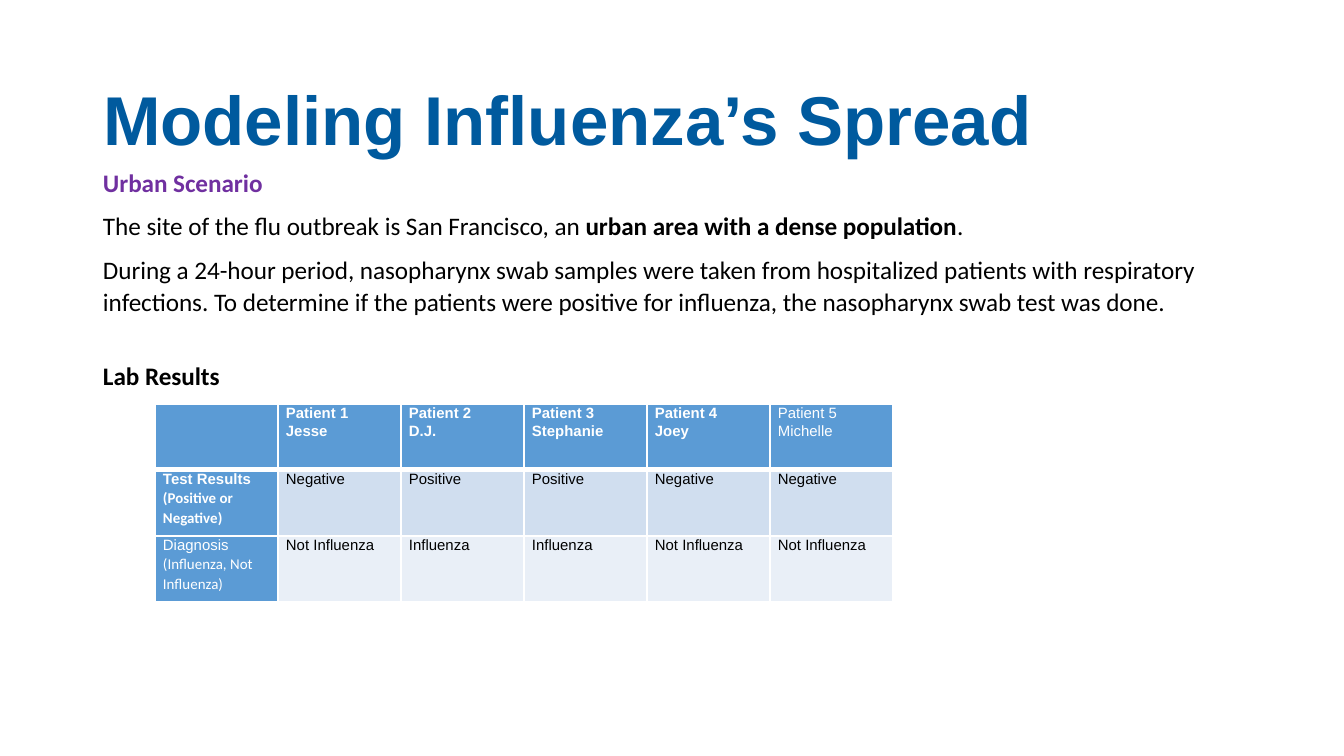
from lxml.etree import SubElement
from pptx import Presentation
from pptx.dml.color import RGBColor
from pptx.enum.text import MSO_ANCHOR
from pptx.oxml.ns import qn
from pptx.util import Emu, Pt

EMU_PER_PX = 914400 / 134.4
WHITE = RGBColor(0xFF, 0xFF, 0xFF)
BLACK = RGBColor(0x00, 0x00, 0x00)
TITLE_BLUE = RGBColor(0x00, 0x5A, 0x9E)
PURPLE = RGBColor(0x70, 0x30, 0xA0)
HEADER_BLUE = RGBColor(0x5B, 0x9B, 0xD5)
BAND_FILLS = [RGBColor(0xD0, 0xDE, 0xEF), RGBColor(0xE9, 0xEF, 0xF7)]

BODY = [
    ([("Urban Scenario", True)], PURPLE, 0),
    ([("The site of the flu outbreak is San Francisco, an ", False),
      ("urban area with a dense population", True), (".", False)], BLACK, 6),
    ([("During a 24-hour period, nasopharynx swab samples were taken from "
       "hospitalized patients with respiratory infections. To determine if the "
       "patients were positive for influenza, the nasopharynx swab test was done.",
       False)], BLACK, 6),
    ([("Lab Results", True)], BLACK, 22.5),
]
PATIENTS = ["Jesse", "D.J.", "Stephanie", "Joey", "Michelle"]
RESULTS = ["Negative", "Positive", "Positive", "Negative", "Negative"]
ROW_LABELS = [["Test Results", "(Positive or", "Negative)"],
              ["Diagnosis", "(Influenza, Not Influenza)"]]


def px(n):
    return Emu(round(n * EMU_PER_PX))


def style(p, size, font, color, bold=None, spacing=1.07, before=0):
    p.line_spacing = spacing
    p.space_before = Pt(before)
    p.font.size = Pt(size)
    p.font.name = font
    p.font.color.rgb = color
    p.font.bold = bold


def add_text(s, x, y, w, h):
    tf = s.shapes.add_textbox(px(x), px(y), px(w), px(h)).text_frame
    tf.word_wrap = True
    tf.margin_left = tf.margin_right = px(10)
    tf.margin_top = tf.margin_bottom = px(5)
    return tf


def add_title(s):
    p = add_text(s, 93, 81, 1158, 120).paragraphs[0]
    p.text = "Modeling Influenza’s Spread"
    style(p, 37, "Arial", TITLE_BLUE, True, 0.9)


def add_body(s):
    tf = add_text(s, 93, 160, 1133, 417)
    for i, (runs, color, before) in enumerate(BODY):
        p = tf.add_paragraph() if i else tf.paragraphs[0]
        style(p, 13.5, "Calibri", color, before=before)
        for text, bold in runs:
            r = p.add_run()
            r.text = text
            r.font.bold = bold


def set_borders(cell, bottom):
    tcPr = cell._tc.get_or_add_tcPr()
    widths = {"a:lnL": 1, "a:lnR": 1, "a:lnT": 1, "a:lnB": bottom}
    for i, (tag, width) in enumerate(widths.items()):
        ln = SubElement(tcPr, qn(tag), w=str(Pt(width)))
        fill = SubElement(ln, qn("a:solidFill"))
        SubElement(fill, qn("a:srgbClr"), val=str(WHITE))
        tcPr.remove(ln)
        tcPr.insert(i, ln)


def fill_cell(cell, lines, fill, color, bold, note_font="Arial", bottom=1):
    cell.fill.solid()
    cell.fill.fore_color.rgb = fill
    cell.vertical_anchor = MSO_ANCHOR.TOP
    cell.margin_left = cell.margin_right = px(8)
    cell.margin_top = cell.margin_bottom = 0
    cell.text = "\n".join(lines)
    for i, p in enumerate(cell.text_frame.paragraphs):
        style(p, 8, note_font if i else "Arial", color, bold)
    set_borders(cell, bottom)


def add_results_table(s):
    columns = len(PATIENTS) + 1
    table = s.shapes.add_table(3, columns, px(155), px(404),
                               px(123 * columns), px(66 * 3)).table
    table.horz_banding = False
    table.first_row = False
    for column in table.columns:
        column.width = px(123)
    for row in table.rows:
        row.height = px(66)

    fill_cell(table.cell(0, 0), [], HEADER_BLUE, WHITE, True, bottom=3)
    for c, name in enumerate(PATIENTS, 1):
        fill_cell(table.cell(0, c), [f"Patient {c}", name], HEADER_BLUE, WHITE,
                  c < len(PATIENTS), bottom=3)

    diagnoses = ["Influenza" if result == "Positive" else "Not Influenza"
                 for result in RESULTS]
    for r, (label, values) in enumerate(zip(ROW_LABELS, [RESULTS, diagnoses]), 1):
        fill_cell(table.cell(r, 0), label, HEADER_BLUE, WHITE, r == 1, "Calibri")
        for c, value in enumerate(values, 1):
            fill_cell(table.cell(r, c), [value], BAND_FILLS[r - 1], BLACK, False)


def main():
    prs = Presentation()
    prs.slide_width, prs.slide_height = px(1344), px(756)
    s = prs.slides.add_slide(prs.slide_layouts[6])
    add_title(s)
    add_body(s)
    add_results_table(s)
    prs.save("out.pptx")


if __name__ == "__main__":
    main()
